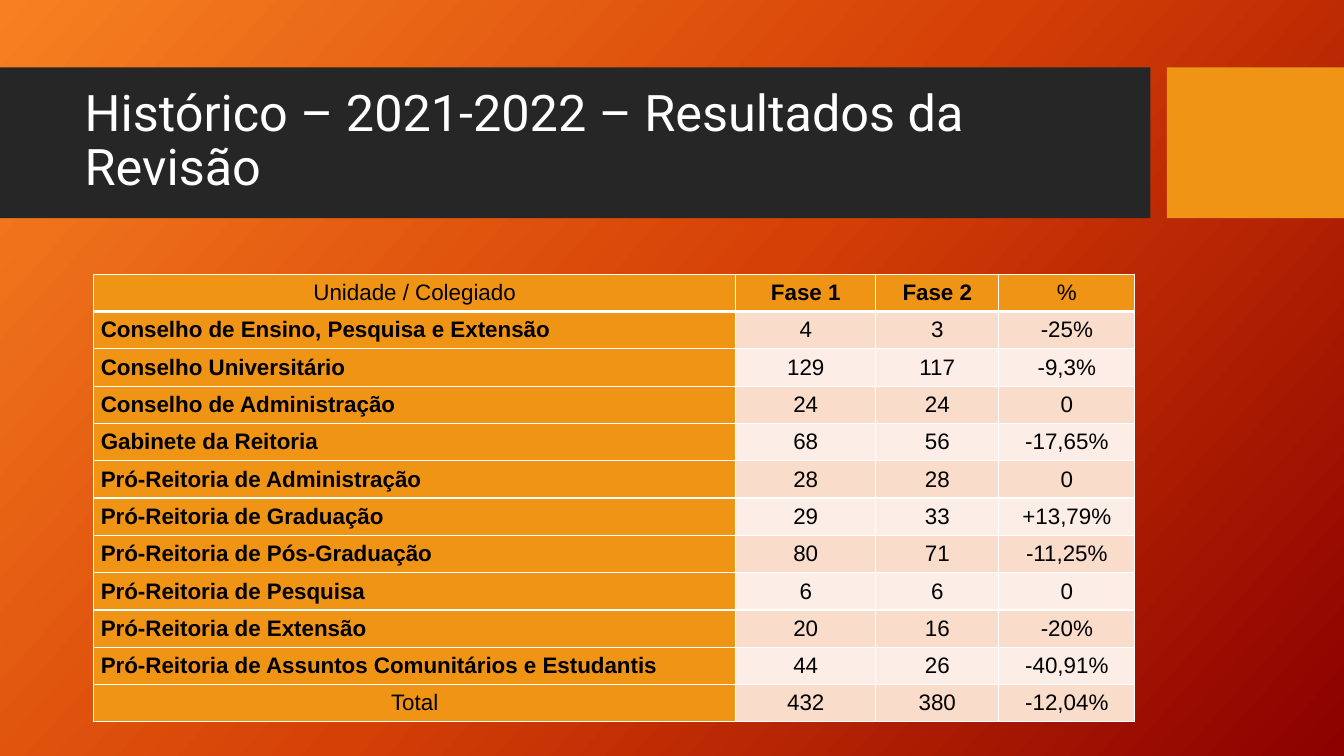
import copy

import pptx
import pptx.dml.color
import pptx.enum.shapes
import pptx.enum.text
import pptx.oxml
import pptx.oxml.ns
import pptx.util

Cm = pptx.util.Cm
Pt = pptx.util.Pt
RGBColor = pptx.dml.color.RGBColor
PP_ALIGN = pptx.enum.text.PP_ALIGN
MIDDLE = pptx.enum.text.MSO_ANCHOR.MIDDLE

WHITE = RGBColor(0xFF, 0xFF, 0xFF)
BLACK = RGBColor(0, 0, 0)
DARK = RGBColor(0x26, 0x26, 0x26)
ORANGE = RGBColor(0xF0, 0x94, 0x15)
PEACH = RGBColor(0xF9, 0xDC, 0xCA)
PALE = RGBColor(0xFC, 0xEE, 0xE7)
GRADIENT = [
    (0, RGBColor(0xF7, 0x81, 0x21)),
    (0.5, RGBColor(0xD5, 0x40, 0x06)),
    (1, RGBColor(0x8C, 0, 0)),
]

ROWS = [
    ("Unidade / Colegiado", "Fase 1", "Fase 2", "%"),
    ("Conselho de Ensino, Pesquisa e Extensão", "4", "3", "-25%"),
    ("Conselho Universitário", "129", "117", "-9,3%"),
    ("Conselho de Administração", "24", "24", "0"),
    ("Gabinete da Reitoria", "68", "56", "-17,65%"),
    ("Pró-Reitoria de Administração", "28", "28", "0"),
    ("Pró-Reitoria de Graduação", "29", "33", "+13,79%"),
    ("Pró-Reitoria de Pós-Graduação", "80", "71", "-11,25%"),
    ("Pró-Reitoria de Pesquisa", "6", "6", "0"),
    ("Pró-Reitoria de Extensão", "20", "16", "-20%"),
    ("Pró-Reitoria de Assuntos Comunitários e Estudantis", "44", "26", "-40,91%"),
    ("Total", "432", "380", "-12,04%"),
]
COLUMN_WIDTHS = [Cm(16.18), Cm(3.53), Cm(3.1), Cm(3.43)]
ROW_HEIGHT = Cm(0.94)


def add_border(cell, side, width):
    """Draw a white border on one side (L, R, T or B); call before filling the cell."""
    cell._tc.get_or_add_tcPr().append(pptx.oxml.parse_xml(
        f'<a:ln{side} {pptx.oxml.ns.nsdecls("a")} w="{width}"><a:solidFill>'
        f'<a:srgbClr val="{WHITE}"/></a:solidFill></a:ln{side}>'))


prs = pptx.Presentation()
prs.slide_width = Cm(33.87)
prs.slide_height = Cm(19.05)
s = prs.slides.add_slide(prs.slide_layouts[5])

# Background
fill = s.background.fill
fill.gradient()
fill.gradient_angle = 318
first_stop = s.element.find(".//" + pptx.oxml.ns.qn("a:gs"))
first_stop.addnext(copy.deepcopy(first_stop))
for stop, (position, color) in zip(fill.gradient_stops, GRADIENT):
    stop.position = position
    stop.color.rgb = color

# Title bands
for left, width, color in [(0, Cm(28.99), DARK), (Cm(29.41), Cm(4.46), ORANGE)]:
    band = s.shapes.add_shape(
        pptx.enum.shapes.MSO_SHAPE.RECTANGLE, left, Cm(1.7), width, Cm(3.8))
    band.shadow.inherit = False
    band.fill.solid()
    band.fill.fore_color.rgb = color
    band.line.fill.background()

# Title, brought in front of the bands
title = s.shapes.title
title.element.getparent().append(title.element)
title.left, title.top, title.width, title.height = Cm(1.88), Cm(2.08), Cm(26.7), Cm(3)
tf = title.text_frame
tf.text = "Histórico – 2021-2022 – Resultados da Revisão"
tf.word_wrap = True
tf.auto_size = pptx.enum.text.MSO_AUTO_SIZE.NONE
tf.vertical_anchor = MIDDLE
p = tf.paragraphs[0]
p.alignment = PP_ALIGN.LEFT
p.line_spacing = 0.9
font = p.runs[0].font
font.name = "Roboto"
font.size = Pt(36)
font.color.rgb = WHITE

# Results table
table = s.shapes.add_table(
    len(ROWS), len(COLUMN_WIDTHS), Cm(2.36), Cm(6.91),
    sum(COLUMN_WIDTHS), ROW_HEIGHT * len(ROWS)).table
for column, width in zip(table.columns, COLUMN_WIDTHS):
    column.width = width
for i, values in enumerate(ROWS):
    table.rows[i].height = ROW_HEIGHT
    is_unit = 0 < i < len(ROWS) - 1
    for j, value in enumerate(values):
        cell = table.cell(i, j)
        add_border(cell, "L", Pt(1))
        add_border(cell, "R", Pt(1))
        add_border(cell, "T", Pt(3 if i == 1 else 1))
        add_border(cell, "B", Pt(3 if i == 0 else 1))
        cell.fill.solid()
        if i == 0 or j == 0:
            cell.fill.fore_color.rgb = ORANGE
        else:
            cell.fill.fore_color.rgb = PEACH if i % 2 else PALE
        cell.vertical_anchor = MIDDLE
        cell.margin_left = cell.margin_right = Cm(0.18)
        cell.margin_top = cell.margin_bottom = 0
        cell.text = value
        p = cell.text_frame.paragraphs[0]
        p.alignment = PP_ALIGN.JUSTIFY if is_unit and j == 0 else PP_ALIGN.CENTER
        font = p.runs[0].font
        font.name = "Arial"
        font.size = Pt(16)
        font.bold = (is_unit and j == 0) or value.startswith("Fase")
        font.color.rgb = BLACK

prs.save("out.pptx")
